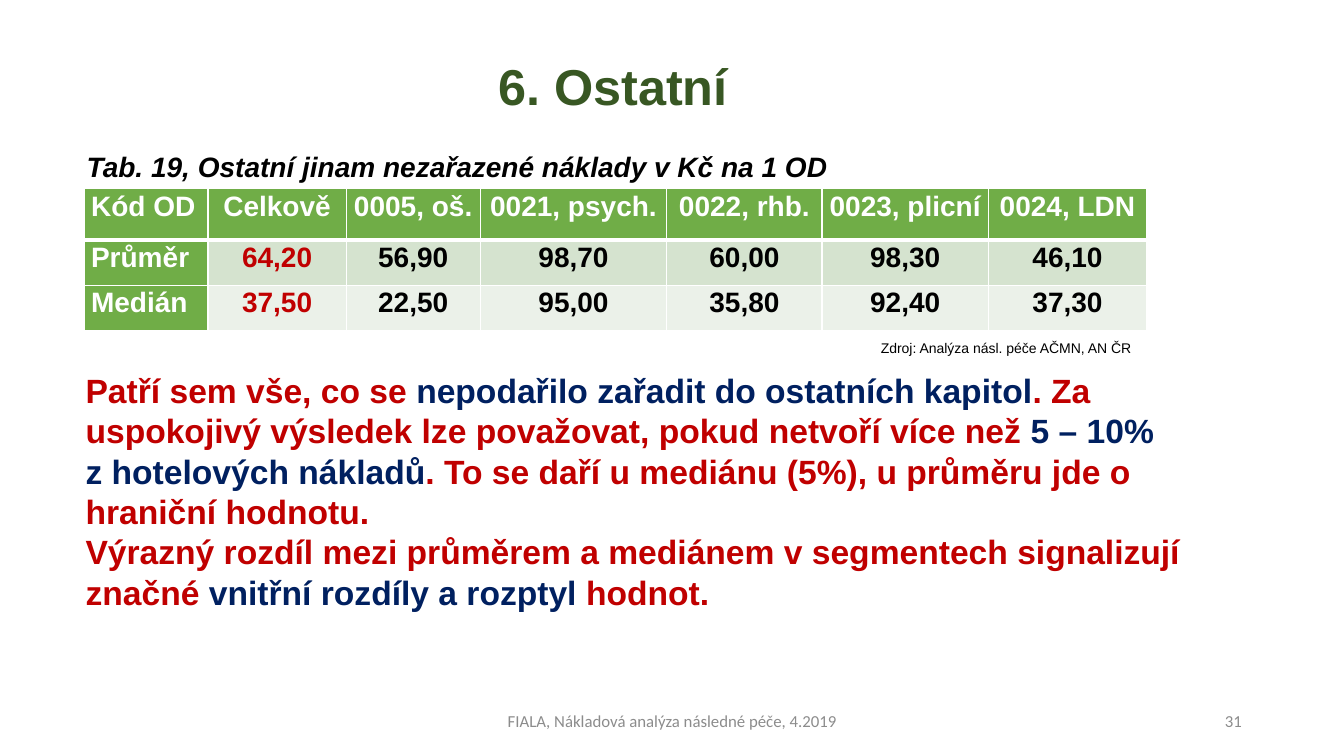
from dataclasses import dataclass

from lxml import etree
from pptx import Presentation
from pptx import util as u
from pptx.dml.color import RGBColor
from pptx.enum import text
from pptx.oxml import ns


@dataclass(frozen=True)
class Theme:
    heading: str = "385723"
    ink: str = "000000"
    paper: str = "FFFFFF"
    red: str = "C00000"
    navy: str = "002060"
    grey: str = "8C8C8C"
    green: str = "70AD47"
    bands: tuple = ("D5E3CF", "EBF1E9")
    font: str = "Arial"
    footer_font: str = "Calibri"
    title_size: int = 36
    body_size: int = 24
    table_size: int = 20
    footer_size: int = 12
    source_size: int = 10


THEME = Theme()
LEFT, CENTER, RIGHT = (text.PP_ALIGN.LEFT, text.PP_ALIGN.CENTER,
                       text.PP_ALIGN.RIGHT)


def write(para, words, *, size, color, font=THEME.font, bold=False,
          italic=False, align=LEFT, spacing=1.0, before=0):
    """Add a run to a paragraph and format both."""
    para.alignment, para.line_spacing = align, spacing
    para.space_before = u.Pt(before)
    span = para.add_run()
    span.text = words
    span.font.name, span.font.size = font, u.Pt(size)
    span.font.bold, span.font.italic = bold, italic
    span.font.color.rgb = RGBColor.from_string(color)


class SlideBuilder:
    """Places elements on a grid of 100 columns by 100 rows."""

    def __init__(self, theme):
        self.theme = theme
        self.deck = Presentation()
        self.deck.slide_width = u.Inches(13.33)
        self.deck.slide_height = u.Inches(7.5)
        self.page = self.deck.slides.add_slide(self.deck.slide_layouts[1])

    def across(self, columns):
        return round(self.deck.slide_width * columns / 100)

    def down(self, rows):
        return round(self.deck.slide_height * rows / 100)

    def area(self, left, top, width, height):
        return (self.across(left), self.down(top),
                self.across(width), self.down(height))

    def placeholder(self, index, area, words, anchor, **style):
        box = self.page.placeholders[index]
        box.left, box.top, box.width, box.height = self.area(*area)
        frame = box.text_frame
        frame.auto_size = text.MSO_AUTO_SIZE.NONE
        frame.vertical_anchor = anchor
        para = frame.paragraphs[0]
        write(para, words, bold=True, spacing=0.9, **style)
        props = para._p.get_or_add_pPr()
        props.set("marL", "0")
        props.set("indent", "0")
        etree.SubElement(props, ns.qn("a:buNone"))

    def text_box(self, area, lines, *, anchor=text.MSO_ANCHOR.TOP,
                 wrap=True, **style):
        """Each line is a list of (words, color) spans."""
        frame = self.page.shapes.add_textbox(*self.area(*area)).text_frame
        frame.word_wrap, frame.vertical_anchor = wrap, anchor
        if not wrap:
            frame.auto_size = text.MSO_AUTO_SIZE.SHAPE_TO_FIT_TEXT
        for number, line in enumerate(lines):
            para = frame.add_paragraph() if number else frame.paragraphs[0]
            for words, color in line:
                write(para, words, color=color, **style)

    def borders(self, cell, **points):
        props = cell._tc.get_or_add_tcPr()
        for order, (side, width) in enumerate(points.items()):
            line = etree.Element(ns.qn(f"a:ln{side}"), w=str(u.Pt(width)))
            fill = etree.SubElement(line, ns.qn("a:solidFill"))
            etree.SubElement(fill, ns.qn("a:srgbClr"), val=self.theme.paper)
            props.insert(order, line)

    def table(self, left, top, widths, heights, rows):
        theme = self.theme
        area = self.area(left, top, sum(widths), sum(heights))
        table = self.page.shapes.add_table(
            len(rows), len(widths), *area).table
        for column, width in zip(table.columns, widths):
            column.width = self.across(width)
        for r, (values, height) in enumerate(zip(rows, heights)):
            table.rows[r].height = self.down(height)
            for c, value in enumerate(values):
                cell = table.cell(r, c)
                header = r == 0 or c == 0
                fill = theme.green if header else theme.bands[r - 1]
                color = (theme.paper if header
                         else theme.red if c == 1 else theme.ink)
                cell.fill.solid()
                cell.fill.fore_color.rgb = RGBColor.from_string(fill)
                cell.margin_left = cell.margin_right = u.Inches(0.07)
                cell.margin_top = cell.margin_bottom = 0
                write(cell.text_frame.paragraphs[0], value, bold=True,
                      size=theme.table_size, color=color, spacing=1.07,
                      align=CENTER if c else LEFT)
                self.borders(cell, L=1, R=1, T=3 if r == 1 else 1,
                             B=3 if r == 0 else 1)


def main():
    slide = SlideBuilder(THEME)
    red, navy = THEME.red, THEME.navy

    # Title and table caption
    slide.placeholder(0, (5.18, 4.93, 80.85, 13.87), "6. Ostatní",
                      text.MSO_ANCHOR.MIDDLE, size=THEME.title_size,
                      color=THEME.heading, align=CENTER)
    slide.placeholder(1, (5.7, 19.6, 86.25, 63.47),
                      "Tab. 19, Ostatní jinam nezařazené náklady v Kč na 1 OD",
                      text.MSO_ANCHOR.TOP, size=THEME.table_size,
                      color=THEME.ink, italic=True, before=10)

    # Cost table and its source
    slide.table(6.25, 24.93,
                (9.23, 10.28, 9.98, 13.88, 11.55, 12.38, 11.78), (6.8, 6, 6), [
                    ("Kód OD", "Celkově", "0005, oš.", "0021, psych.",
                     "0022, rhb.", "0023, plicní", "0024, LDN"),
                    ("Průměr", "64,20", "56,90", "98,70", "60,00", "98,30",
                     "46,10"),
                    ("Medián", "37,50", "22,50", "95,00", "35,80", "92,40",
                     "37,30"),
                ])
    slide.text_box((64.8, 44.27, 20.48, 3.6),
                   [[("Zdroj: Analýza násl. péče AČMN, AN ČR", THEME.ink)]],
                   wrap=False, size=THEME.source_size)

    # Commentary
    slide.text_box((5.63, 48.27, 83.7, 33.6), [
        [("Patří sem vše, co se ", red),
         ("nepodařilo zařadit do ostatních kapitol", navy), (". Za", red)],
        [("uspokojivý výsledek lze považovat, pokud netvoří více než ", red),
         ("5 – 10%", navy)],
        [("z hotelových nákladů", navy),
         (". To se daří u mediánu (5%), u průměru jde o", red)],
        [("hraniční hodnotu.", red)],
        [("Výrazný rozdíl mezi průměrem a mediánem v segmentech signalizují",
          red)],
        [("značné ", red), ("vnitřní rozdíly a rozptyl", navy),
         (" hodnot.", red)],
    ], wrap=False, size=THEME.body_size, bold=True)

    # Footer and page number
    for left, width, words, align in (
            (33.15, 33.75, "FIALA, Nákladová analýza následné péče, 4.2019",
             CENTER),
            (70.65, 22.5, "31", RIGHT)):
        slide.text_box((left, 92.67, width, 5.33), [[(words, THEME.grey)]],
                       anchor=text.MSO_ANCHOR.MIDDLE, align=align,
                       size=THEME.footer_size, font=THEME.footer_font)

    slide.deck.save("out.pptx")


if __name__ == "__main__":
    main()
